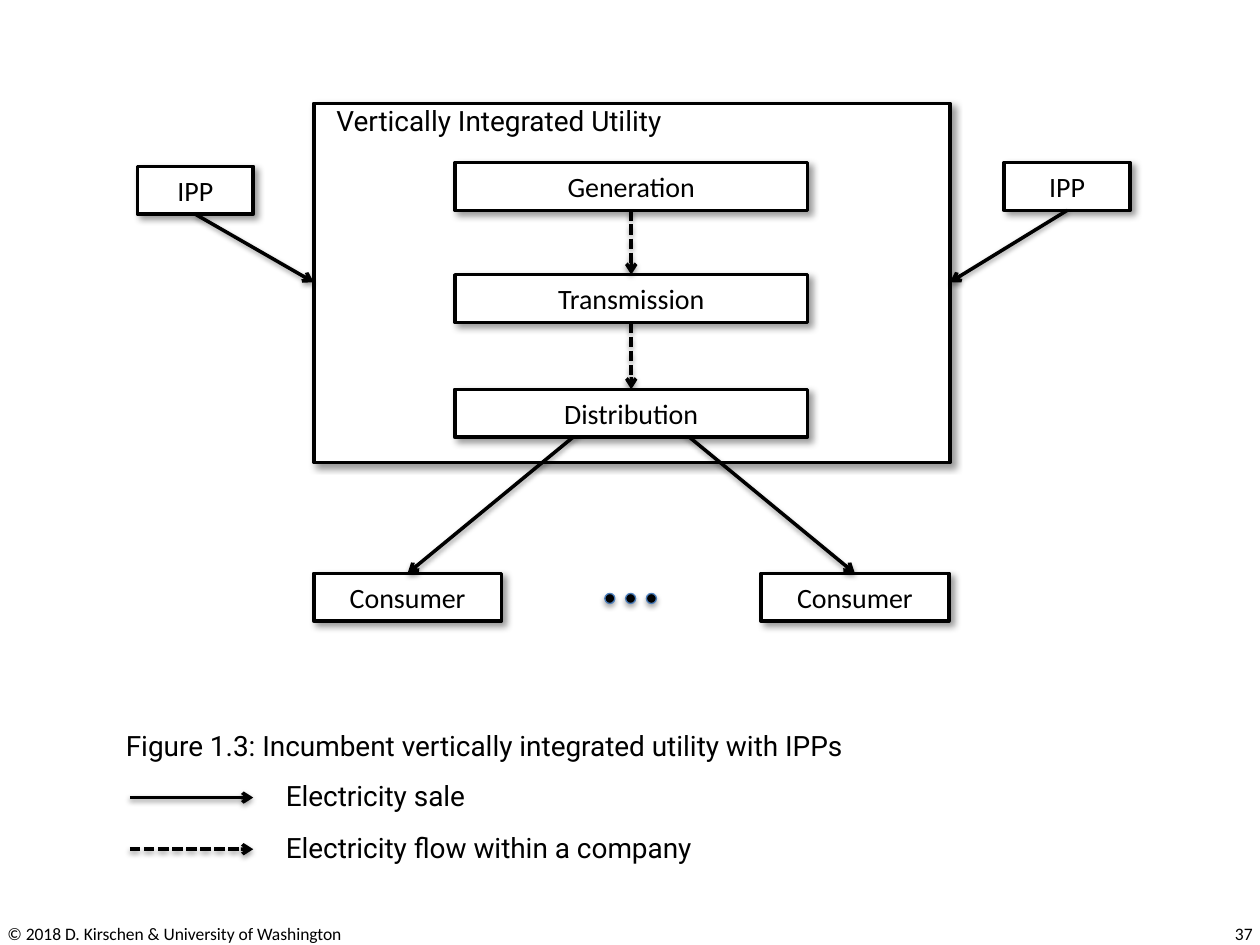
from typing import NamedTuple

from lxml.etree import SubElement
from pptx import Presentation
from pptx.dml.color import RGBColor
from pptx.enum.dml import MSO_LINE
from pptx.enum.shapes import MSO_CONNECTOR, MSO_SHAPE
from pptx.enum.text import MSO_ANCHOR as Anchor, PP_ALIGN as Align
from pptx.oxml.ns import qn
from pptx.util import Inches, Pt

BLACK, WHITE, DOT_EDGE = "000000", "FFFFFF", "4B7EBC"
BOX_H = 0.38


class Shadow(NamedTuple):
    alpha: int
    blur: float
    dist: float
    angle: int


class Box(NamedTuple):
    text: str
    left: float
    top: float
    width: float
    height: float = BOX_H


class Arrow(NamedTuple):
    x1: float
    y1: float
    x2: float
    y2: float
    dashed: bool = False


class Label(NamedTuple):
    text: str
    left: float
    top: float
    width: float
    height: float = 0.37
    font: str = "Roboto"
    size: int = 16
    align: Align = Align.LEFT
    anchor: Anchor = Anchor.TOP
    wrap: bool = False


BOX_SHADOW = Shadow(40, 4, 3, 45)
DOT_SHADOW = Shadow(35, 3.1, 1.8, 90)
ARROW_SHADOW = Shadow(38, 3.1, 1.6, 90)

UTILITY = Box("", 2.49, 0.82, 5.05, 2.85)
STAGES = [Box("Generation", 3.61, 1.29, 2.8), Box("Transmission", 3.61, 2.18, 2.8)]
DISTRIBUTION = Box("Distribution", 3.61, 3.09, 2.8)
CONSUMERS = [Box("Consumer", x, 4.55, 1.49) for x in (2.49, 6.04)]
IPPS = [Box("IPP", 1.09, 1.32, 0.92), Box("IPP", 7.97, 1.29, 1)]

MID_X = 5.01
FLOWS = [Arrow(MID_X, a.top + BOX_H, MID_X, b.top, True)
         for a, b in zip(STAGES, STAGES[1:] + [DISTRIBUTION])]
SALES = [Arrow(MID_X, DISTRIBUTION.top, c.left + c.width / 2, c.top) for c in CONSUMERS]
IPP_SALES = [Arrow(b.left + b.width / 2, b.top + BOX_H, edge, 2.24)
             for b, edge in zip(IPPS, (UTILITY.left, UTILITY.left + UTILITY.width))]
LEGEND = [Arrow(1.03, 6.33, 2.01, 6.33), Arrow(1.03, 6.74, 2.01, 6.74, True)]

FOOTER = {"height": 0.4, "font": "Calibri", "size": 10, "anchor": Anchor.MIDDLE, "wrap": True}
LABELS = [
    Label("Vertically Integrated Utility", 2.57, 0.77, 2.78, align=Align.CENTER),
    Label("Figure 1.3: Incumbent vertically integrated utility with IPPs", 0.9, 5.73, 5.95),
    Label("Electricity sale", 2.17, 6.13, 1.67),
    Label("Electricity flow within a company", 2.17, 6.54, 3.73),
    Label("© 2018 D. Kirschen & University of Washington", -0.04, 7.21, 2.94, **FOOTER),
    Label("37", 7.71, 7.21, 2.33, align=Align.RIGHT, **FOOTER),
]


def rgb(value: str) -> RGBColor:
    return RGBColor.from_string(value)


def set_shadow(shape, shadow: Shadow) -> None:
    """Add an outer shadow; call it after the line has been formatted."""
    effects = SubElement(shape._element.spPr, qn("a:effectLst"))
    outer = SubElement(effects, qn("a:outerShdw"), blurRad=str(Pt(shadow.blur)),
                       dist=str(Pt(shadow.dist)), dir=str(shadow.angle * 60000),
                       rotWithShape="0")
    color = SubElement(outer, qn("a:srgbClr"), val=BLACK)
    SubElement(color, qn("a:alpha"), val=str(shadow.alpha * 1000))


def set_line(line, color: str, width: float) -> None:
    line.color.rgb = rgb(color)
    line.width = Pt(width)


def write(tf, text: str, font: str, size: int, align: Align) -> None:
    p = tf.paragraphs[0]
    p.alignment = align
    r = p.add_run()
    r.text = text
    for name, value in {"name": font, "size": Pt(size)}.items():
        setattr(r.font, name, value)
    r.font.color.rgb = rgb(BLACK)


def add_solid(s, kind, box: Box, fill: str, edge: str, width: float, shadow: Shadow):
    sp = s.shapes.add_shape(kind, *map(Inches, box[1:]))
    sp.fill.solid()
    sp.fill.fore_color.rgb = rgb(fill)
    set_line(sp.line, edge, width)
    set_shadow(sp, shadow)
    return sp


def add_box(s, box: Box) -> None:
    sp = add_solid(s, MSO_SHAPE.RECTANGLE, box, WHITE, BLACK, 2, BOX_SHADOW)
    if box.text:
        sp.text_frame.vertical_anchor = Anchor.MIDDLE
        write(sp.text_frame, box.text, "Calibri", 16, Align.CENTER)


def add_dot(s, left: float) -> None:
    add_solid(s, MSO_SHAPE.OVAL, Box("", left, 4.71, 0.08, 0.08),
              BLACK, DOT_EDGE, 0.75, DOT_SHADOW)


def add_arrow(s, arrow: Arrow) -> None:
    cx = s.shapes.add_connector(MSO_CONNECTOR.STRAIGHT, *map(Inches, arrow[:4]))
    set_line(cx.line, BLACK, 2)
    if arrow.dashed:
        cx.line.dash_style = MSO_LINE.SQUARE_DOT
    SubElement(cx.line._get_or_add_ln(), qn("a:tailEnd"), type="arrow")
    set_shadow(cx, ARROW_SHADOW)


def add_label(s, label: Label) -> None:
    tf = s.shapes.add_textbox(*map(Inches, label[1:5])).text_frame
    for name, value in {"word_wrap": label.wrap, "vertical_anchor": label.anchor}.items():
        setattr(tf, name, value)
    write(tf, label.text, label.font, label.size, label.align)


def main() -> None:
    prs = Presentation()
    prs.slide_width, prs.slide_height = Inches(10), Inches(7.5)
    s = prs.slides.add_slide(prs.slide_layouts[6])
    for box in [UTILITY, *STAGES, *CONSUMERS]:
        add_box(s, box)
    for arrow in FLOWS + SALES:
        add_arrow(s, arrow)
    for i in range(3):
        add_dot(s, 4.8 + i * 0.165)
    for box in [DISTRIBUTION, *IPPS]:  # Distribution covers the start of the sale arrows
        add_box(s, box)
    for arrow in LEGEND + IPP_SALES:
        add_arrow(s, arrow)
    for label in LABELS:
        add_label(s, label)
    prs.save("out.pptx")


if __name__ == "__main__":
    main()
